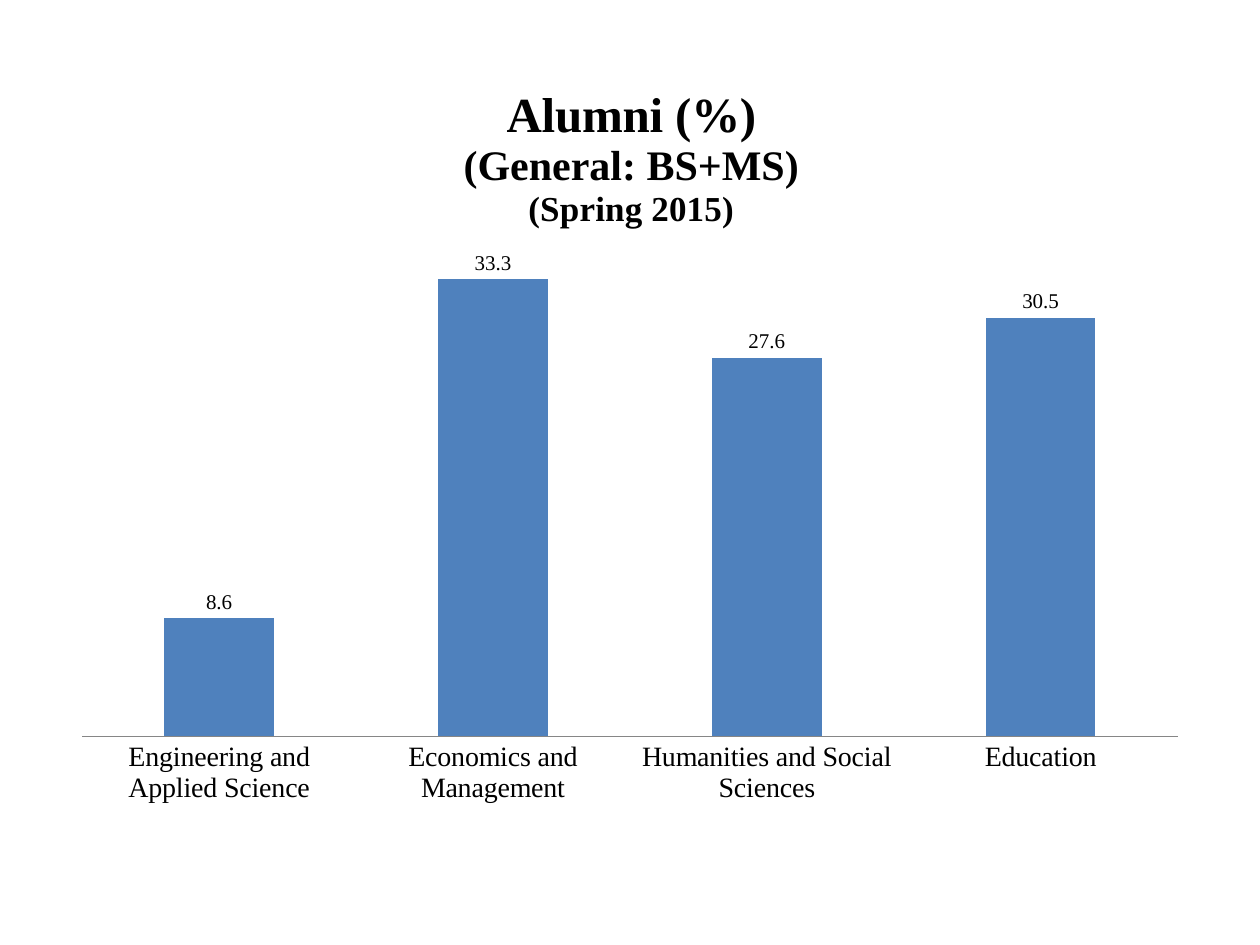
from pptx import Presentation
from pptx import oxml, util as u
from pptx.chart import data
from pptx.dml.color import RGBColor
from pptx.enum import chart as c
from pptx.oxml import ns

PX = u.Inches(1) / 126
FONT = "Times New Roman"
BLACK = RGBColor(0x00, 0x00, 0x00)
BLUE = RGBColor(0x4F, 0x81, 0xBD)
GREY = RGBColor(0x86, 0x86, 0x86)
ALUMNI = {
    "Engineering and Applied Science": 8.6,
    "Economics and Management": 33.3,
    "Humanities and Social Sciences": 27.6,
    "Education": 30.5,
}
TITLE_LINES = [("Alumni (%)", 28), ("(General: BS+MS)", 24), ("(Spring 2015)", 20)]


def px(length):
    """Turn a length in px into EMU."""
    return u.Emu(round(length * PX))


def format_font(font, size, bold=False):
    """Apply the slide's typeface and colour."""
    font.name, font.size, font.bold = FONT, u.Pt(size), bold
    font.color.rgb = BLACK


def place_part(element, index, target=None, **fractions):
    """Give a chart part a manual layout in fractions of the chart."""
    for layout in element.findall(ns.qn("c:layout")):
        element.remove(layout)
    settings = {"layoutTarget": target} if target else {}
    settings.update(xMode="edge", yMode="edge", **fractions)
    body = "".join(f'<c:{name} val="{value}"/>' for name, value in settings.items())
    element.insert(index, oxml.parse_xml(
        f'<c:layout {ns.nsdecls("c")}><c:manualLayout>{body}</c:manualLayout></c:layout>'))


def add_chart_title(chart):
    """Write the three-line chart title."""
    chart.has_title = True
    title = chart.chart_title
    title.include_in_layout = False
    frame = title.text_frame
    frame.text = "\n".join(line for line, size in TITLE_LINES)
    for paragraph, (line, size) in zip(frame.paragraphs, TITLE_LINES):
        format_font(paragraph.font, size, True)
        format_font(paragraph.runs[0].font, size, True)
    place_part(title.element, 1, x=0.35, y=0.03)


def format_axes(chart):
    """Show the category axis only."""
    categories, values = chart.category_axis, chart.value_axis
    categories.major_tick_mark = c.XL_TICK_MARK.NONE
    categories.format.line.color.rgb = GREY
    format_font(categories.tick_labels.font, 16)
    values.visible = False
    values.has_major_gridlines = False
    values.minimum_scale, values.maximum_scale = 0, 35


def add_alumni_chart(slide, left, top, width, height):
    """Draw the alumni column chart in the given box."""
    chart_data = data.CategoryChartData(number_format="General")
    chart_data.categories = list(ALUMNI)
    chart_data.add_series("Series 1", list(ALUMNI.values()))
    chart = slide.shapes.add_chart(
        c.XL_CHART_TYPE.COLUMN_CLUSTERED,
        px(left), px(top), px(width), px(height), chart_data).chart
    chart.has_legend = False
    chart.font.name, chart.font.size = "Calibri", u.Pt(10)
    add_chart_title(chart)
    format_axes(chart)

    plot = chart.plots[0]
    plot.gap_width, plot.overlap, plot.vary_by_categories = 150, -25, False
    fill = plot.series[0].format.fill
    fill.solid()
    fill.fore_color.rgb = BLUE
    labels = plot.series[0].data_labels
    labels.show_value = True
    labels.position = c.XL_LABEL_POSITION.OUTSIDE_END
    format_font(labels.font, 12)
    plot_area = chart.element.find(".//" + ns.qn("c:plotArea"))
    place_part(plot_area, 0, "inner", x=0.017, y=0.251, w=0.966, h=0.612)


def main():
    """Build and save the slide."""
    presentation = Presentation()
    presentation.slide_width, presentation.slide_height = px(1260), px(945)
    slide = presentation.slides.add_slide(presentation.slide_layouts[6])
    add_alumni_chart(slide, 63, 59, 1134, 785)
    presentation.save("out.pptx")


if __name__ == "__main__":
    main()
